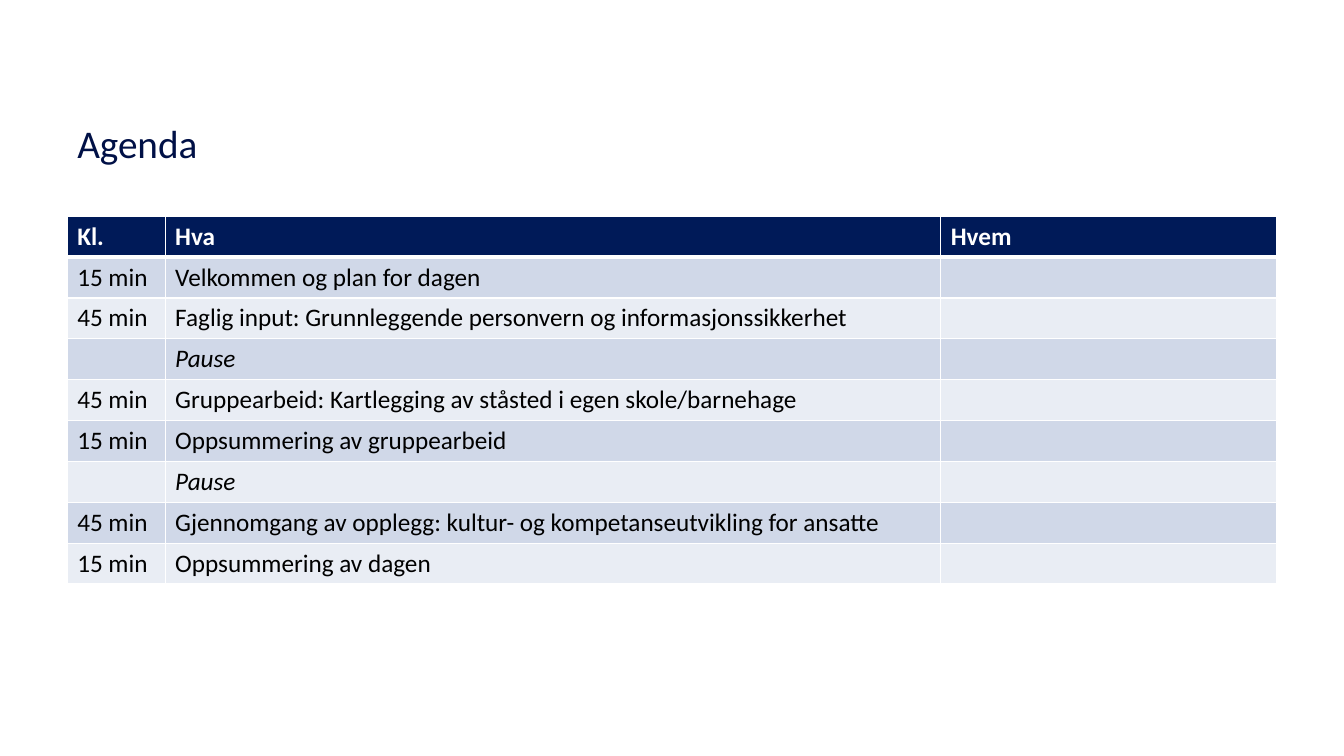
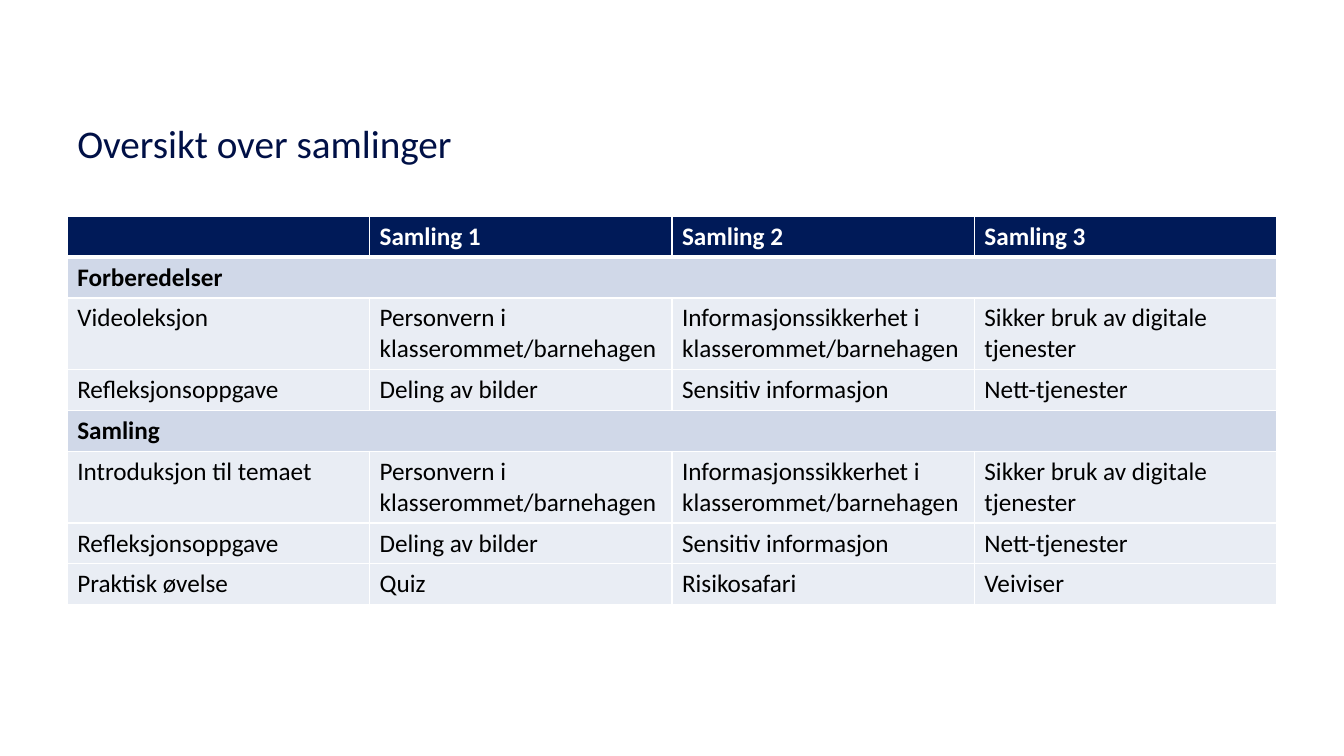
"""Build two slides that show a workshop agenda and an overview of gatherings."""
from dataclasses import dataclass

from lxml.etree import SubElement
from pptx import Presentation
from pptx.dml.color import RGBColor
from pptx.enum.text import MSO_ANCHOR, MSO_AUTO_SIZE, PP_ALIGN
from pptx.oxml.ns import qn
from pptx.presentation import Presentation as Deck
from pptx.slide import Slide
from pptx.table import _Cell
from pptx.util import Pt


@dataclass(frozen=True)
class Theme:
    """Colours, type and measures in points that the slides share."""

    title_color: RGBColor = RGBColor.from_string("001046")
    header_fill: RGBColor = RGBColor.from_string("001A58")
    dark_band: RGBColor = RGBColor.from_string("D0D8E8")
    light_band: RGBColor = RGBColor.from_string("E9EDF4")
    text: RGBColor = RGBColor.from_string("000000")
    white: RGBColor = RGBColor.from_string("FFFFFF")
    font: str = "Calibri"
    title_size: float = 28
    body_size: float = 18
    left: float = 48
    width: float = 864
    title_top: float = 57.6
    title_height: float = 89.3
    table_top: float = 154.4
    line_height: float = 22
    cell_padding: float = 7.2
    thin_line: float = 1
    thick_line: float = 3


@dataclass(frozen=True)
class Row:
    """One table row and the way it is set."""

    texts: tuple[str, ...]
    fill: RGBColor
    color: RGBColor
    bold: bool = False
    italic: bool = False
    merged: bool = False
    lines: int = 1


@dataclass(frozen=True)
class TableSlide:
    """A title with a table below it."""

    title: str
    columns: tuple[float, ...]
    rows: tuple[Row, ...]


THEME = Theme()


def header(*texts: str) -> Row:
    """Return a header row."""
    return Row(texts, THEME.header_fill, THEME.white, bold=True)


def section(text: str) -> Row:
    """Return a section row that spans the table."""
    return Row((text,), THEME.dark_band, THEME.text, bold=True, merged=True)


def detail(*texts: str, lines: int = 1) -> Row:
    """Return a plain row below a section."""
    return Row(texts, THEME.light_band, THEME.text, lines=lines)


def agenda_rows(items: tuple[tuple[str, str], ...]) -> tuple[Row, ...]:
    """Return banded agenda rows, with untimed breaks in italics."""
    bands = (THEME.dark_band, THEME.light_band)
    return tuple(
        Row((time, topic, ""), bands[index % 2], THEME.text, italic=not time)
        for index, (time, topic) in enumerate(items)
    )


AGENDA = (
    ("15 min", "Velkommen og plan for dagen"),
    ("45 min", "Faglig input: Grunnleggende personvern og informasjonssikkerhet"),
    ("", "Pause"),
    ("45 min", "Gruppearbeid: Kartlegging av ståsted i egen skole/barnehage"),
    ("15 min", "Oppsummering av gruppearbeid"),
    ("", "Pause"),
    ("45 min", "Gjennomgang av opplegg: kultur- og kompetanseutvikling for ansatte"),
    ("15 min", "Oppsummering av dagen"),
)
TOPICS = (
    "Personvern i klasserommet/barnehagen",
    "Informasjonssikkerhet i klasserommet/barnehagen",
    "Sikker bruk av digitale tjenester",
)
REFLECTION = detail(
    "Refleksjonsoppgave", "Deling av bilder", "Sensitiv informasjon", "Nett-tjenester"
)
SLIDES = (
    TableSlide(
        "Agenda",
        (70, 554, 240),
        (header("Kl.", "Hva", "Hvem"), *agenda_rows(AGENDA)),
    ),
    TableSlide(
        "Oversikt over samlinger",
        (THEME.width / 4,) * 4,
        (
            header("", "Samling 1", "Samling 2", "Samling 3"),
            section("Forberedelser"),
            detail("Videoleksjon", *TOPICS, lines=2),
            REFLECTION,
            section("Samling"),
            detail("Introduksjon til temaet", *TOPICS, lines=2),
            REFLECTION,
            detail("Praktisk øvelse", "Quiz", "Risikosafari", "Veiviser"),
        ),
    ),
)


def add_title(slide: Slide, text: str) -> None:
    """Place and format the title placeholder."""
    title = slide.shapes.title
    title.left, title.top = Pt(THEME.left), Pt(THEME.title_top)
    title.width, title.height = Pt(THEME.width), Pt(THEME.title_height)
    frame = title.text_frame
    frame.text = text
    frame.word_wrap = True
    frame.auto_size = MSO_AUTO_SIZE.NONE
    frame.vertical_anchor = MSO_ANCHOR.MIDDLE
    paragraph = frame.paragraphs[0]
    paragraph.alignment = PP_ALIGN.LEFT
    paragraph.font.name = THEME.font
    paragraph.font.size = Pt(THEME.title_size)
    paragraph.font.color.rgb = THEME.title_color


def set_borders(cell: _Cell, top: float, bottom: float) -> None:
    """Draw white lines around a cell."""
    properties = cell._tc.get_or_add_tcPr()
    widths = {"L": THEME.thin_line, "R": THEME.thin_line, "T": top, "B": bottom}
    for side, width in widths.items():
        line = SubElement(properties, qn(f"a:ln{side}"), w=str(Pt(width)))
        fill = SubElement(line, qn("a:solidFill"))
        SubElement(fill, qn("a:srgbClr"), val=str(THEME.white))


def format_cell(cell: _Cell, row: Row, text: str) -> None:
    """Fill a cell and set its text."""
    cell.fill.solid()
    cell.fill.fore_color.rgb = row.fill
    cell.text = text
    font = cell.text_frame.paragraphs[0].font
    font.name = THEME.font
    font.size = Pt(THEME.body_size)
    font.bold = row.bold
    font.italic = row.italic
    font.color.rgb = row.color


def add_table(slide: Slide, content: TableSlide) -> None:
    """Add the table with its columns, rows and cells."""
    heights = [row.lines * THEME.line_height + THEME.cell_padding for row in content.rows]
    table = slide.shapes.add_table(
        len(content.rows), len(content.columns),
        Pt(THEME.left), Pt(THEME.table_top), Pt(THEME.width), Pt(sum(heights)),
    ).table
    table.horz_banding = False
    for column, width in zip(table.columns, content.columns):
        column.width = Pt(width)
    for index, (row, height) in enumerate(zip(content.rows, heights)):
        table.rows[index].height = Pt(height)
        cells = list(table.rows[index].cells)
        top = THEME.thick_line if index == 1 else THEME.thin_line
        bottom = THEME.thick_line if index == 0 else THEME.thin_line
        for cell in cells:
            set_borders(cell, top, bottom)
        if row.merged:
            cells[0].merge(cells[-1])
        for cell, text in zip(cells, row.texts):
            format_cell(cell, row, text)


def add_table_slide(presentation: Deck, content: TableSlide) -> None:
    """Add one title-only slide with its table."""
    slide = presentation.slides.add_slide(presentation.slide_layouts[5])
    add_title(slide, content.title)
    add_table(slide, content)


def main() -> None:
    """Build and save the presentation."""
    presentation = Presentation()
    presentation.slide_width, presentation.slide_height = Pt(960), Pt(540)
    for content in SLIDES:
        add_table_slide(presentation, content)
    presentation.save("out.pptx")


if __name__ == "__main__":
    main()
